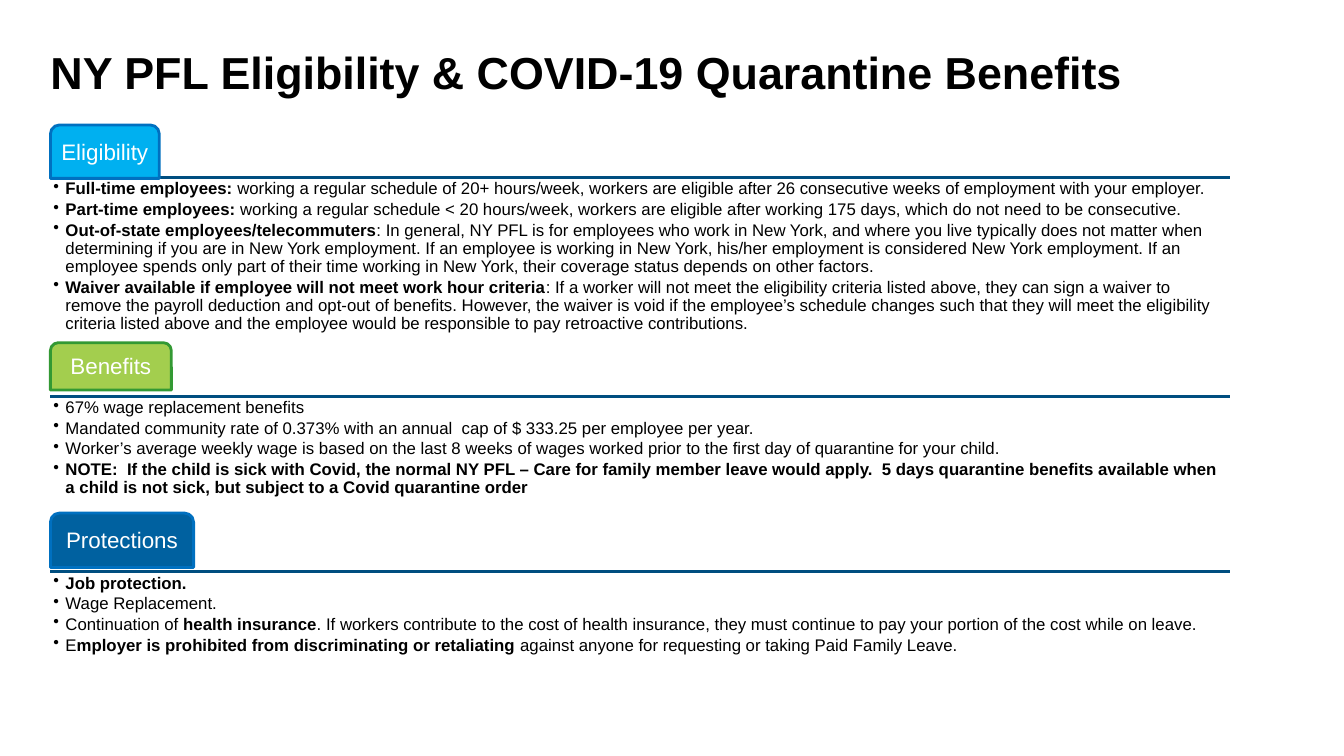
from dataclasses import dataclass

import lxml.etree
import pptx
import pptx.dml.color
import pptx.enum.shapes
import pptx.enum.text
import pptx.oxml.ns
import pptx.util
from pptx.util import Inches

TITLE = "NY PFL Eligibility & COVID-19 Quarantine Benefits"

# Text between double asterisks is bold. Lengths are in inches.
SECTIONS = [
    {
        "label": "Eligibility", "fill": "00B0F0", "outline": "0070C0",
        "tab_top": 1.24, "tab_width": 1.08, "tab_height": 0.53,
        "rule_top": 1.76, "body_height": 1.63,
        "bullets": [
            "**Full-time employees: **working a regular schedule of 20+ hours/week, workers are "
            "eligible after 26 consecutive weeks of employment with your employer.",
            "**Part-time employees: **working a regular schedule < 20 hours/week, workers are "
            "eligible after working 175 days, which do not need to be consecutive.",
            "**Out-of-state employees/telecommuters**: In general, NY PFL is for employees who "
            "work in New York, and where you live typically does not matter when determining if "
            "you are in New York employment. If an employee is working in New York, his/her "
            "employment is considered New York employment. If an employee spends only part of "
            "their time working in New York, their coverage status depends on other factors.",
            "**Waiver available if employee will not meet work hour criteria**: If a worker will "
            "not meet the eligibility criteria listed above, they can sign a waiver to remove the "
            "payroll deduction and opt-out of benefits. However, the waiver is void if the "
            "employee’s schedule changes such that they will meet the eligibility criteria listed "
            "above and the employee would be responsible to pay retroactive contributions.",
        ],
    },
    {
        "label": "Benefits", "fill": "A3CE4E", "outline": "339933",
        "tab_top": 3.4, "tab_width": 1.2, "tab_height": 0.47,
        "rule_top": 3.93, "body_height": 1.13,
        "bullets": [
            "67% wage replacement benefits",
            "Mandated community rate of 0.373% with an annual  cap of $ 333.25 per employee per "
            "year.",
            "Worker’s average weekly wage is based on the last 8 weeks of wages worked prior to "
            "the first day of quarantine for your child.",
            "**NOTE:  If the child is sick with Covid, the normal NY PFL – Care for family member "
            "leave would apply.  5 days quarantine benefits available when a child is not sick, "
            "but subject to a Covid quarantine order**",
        ],
    },
    {
        "label": "Protections", "fill": "0061A0", "outline": "0070C0",
        "tab_top": 5.09, "tab_width": 1.42, "tab_height": 0.54,
        "rule_top": 5.67, "body_height": 1.13,
        "bullets": [
            "**Job protection.**",
            "Wage Replacement.",
            "Continuation of **health insurance**. If workers contribute to the cost of health "
            "insurance, they must continue to pay your portion of the cost while on leave.",
            "E**mployer is prohibited from discriminating or retaliating** against anyone for "
            "requesting or taking Paid Family Leave.",
        ],
    },
]


@dataclass(frozen=True)
class Theme:
    font: str = "Arial"
    text: str = "000000"
    tab_text: str = "FFFFFF"
    rule: str = "004E80"
    title_size: int = 32
    tab_size: int = 16
    body_size: int = 12
    line_width: int = 2
    line_spacing: float = 0.9
    bullet_gap: float = 1.8


THEME = Theme()
LEFT = 0.5
CONTENT_WIDTH = 11.7
INSET = 0.03
BULLET_INDENT = 0.12


def rgb(color):
    return pptx.dml.color.RGBColor.from_string(color)


def set_font(font, size, color, bold=False):
    font.name = THEME.font
    font.size = pptx.util.Pt(size)
    font.color.rgb = rgb(color)
    font.bold = bold


def set_frame(text_frame, inset, anchor):
    text_frame.word_wrap = True
    text_frame.auto_size = pptx.enum.text.MSO_AUTO_SIZE.NONE
    text_frame.vertical_anchor = anchor
    text_frame.margin_left = text_frame.margin_right = Inches(inset)
    text_frame.margin_top = text_frame.margin_bottom = Inches(inset)


def set_line(line, color):
    line.color.rgb = rgb(color)
    line.width = pptx.util.Pt(THEME.line_width)


def add_title(slide):
    title = slide.shapes.title
    title.left, title.top = Inches(LEFT), Inches(0.5)
    title.width, title.height = Inches(12.42), Inches(0.83)
    set_frame(title.text_frame, 0, pptx.enum.text.MSO_ANCHOR.TOP)
    title.text_frame.text = TITLE
    paragraph = title.text_frame.paragraphs[0]
    paragraph.alignment = pptx.enum.text.PP_ALIGN.LEFT
    paragraph.line_spacing = THEME.line_spacing
    set_font(paragraph.runs[0].font, THEME.title_size, THEME.text, bold=True)


def add_rule(slide, top):
    rule = slide.shapes.add_connector(
        pptx.enum.shapes.MSO_CONNECTOR.STRAIGHT,
        Inches(LEFT), Inches(top), Inches(LEFT + CONTENT_WIDTH), Inches(top))
    set_line(rule.line, THEME.rule)
    lxml.etree.SubElement(rule._element.spPr, pptx.oxml.ns.qn("a:effectLst"))


def add_tab(slide, section):
    tab = slide.shapes.add_shape(
        pptx.enum.shapes.MSO_SHAPE.ROUND_2_SAME_RECTANGLE,
        Inches(LEFT), Inches(section["tab_top"]),
        Inches(section["tab_width"]), Inches(section["tab_height"]))
    tab.shadow.inherit = False
    tab.fill.solid()
    tab.fill.fore_color.rgb = rgb(section["fill"])
    set_line(tab.line, section["outline"])
    set_frame(tab.text_frame, INSET, pptx.enum.text.MSO_ANCHOR.MIDDLE)
    tab.text_frame.word_wrap = False
    tab.text_frame.text = section["label"]
    paragraph = tab.text_frame.paragraphs[0]
    paragraph.alignment = pptx.enum.text.PP_ALIGN.CENTER
    paragraph.line_spacing = THEME.line_spacing
    set_font(paragraph.runs[0].font, THEME.tab_size, THEME.tab_text)


def add_bullet(paragraph, marked_text):
    paragraph.line_spacing = THEME.line_spacing
    paragraph.space_after = pptx.util.Pt(THEME.bullet_gap)
    properties = paragraph._p.get_or_add_pPr()
    properties.set("marL", str(Inches(BULLET_INDENT)))
    properties.set("indent", str(-Inches(BULLET_INDENT)))
    bullet = lxml.etree.SubElement(properties, pptx.oxml.ns.qn("a:buChar"))
    bullet.set("char", "•")
    for index, part in enumerate(marked_text.split("**")):
        if part:
            run = paragraph.add_run()
            run.text = part
            set_font(run.font, THEME.body_size, THEME.text, bold=index % 2 == 1)


def add_body(slide, section):
    body = slide.shapes.add_textbox(
        Inches(LEFT), Inches(section["rule_top"]),
        Inches(CONTENT_WIDTH), Inches(section["body_height"]))
    text_frame = body.text_frame
    set_frame(text_frame, INSET, pptx.enum.text.MSO_ANCHOR.TOP)
    for index, bullet in enumerate(section["bullets"]):
        paragraph = text_frame.add_paragraph() if index else text_frame.paragraphs[0]
        add_bullet(paragraph, bullet)


def main():
    presentation = pptx.Presentation()
    presentation.slide_width = Inches(13.33)
    presentation.slide_height = Inches(7.5)
    slide = presentation.slides.add_slide(presentation.slide_layouts[5])
    add_title(slide)
    for section in SECTIONS:
        add_rule(slide, section["rule_top"])
        add_tab(slide, section)
        add_body(slide, section)
    presentation.save("out.pptx")


if __name__ == "__main__":
    main()
